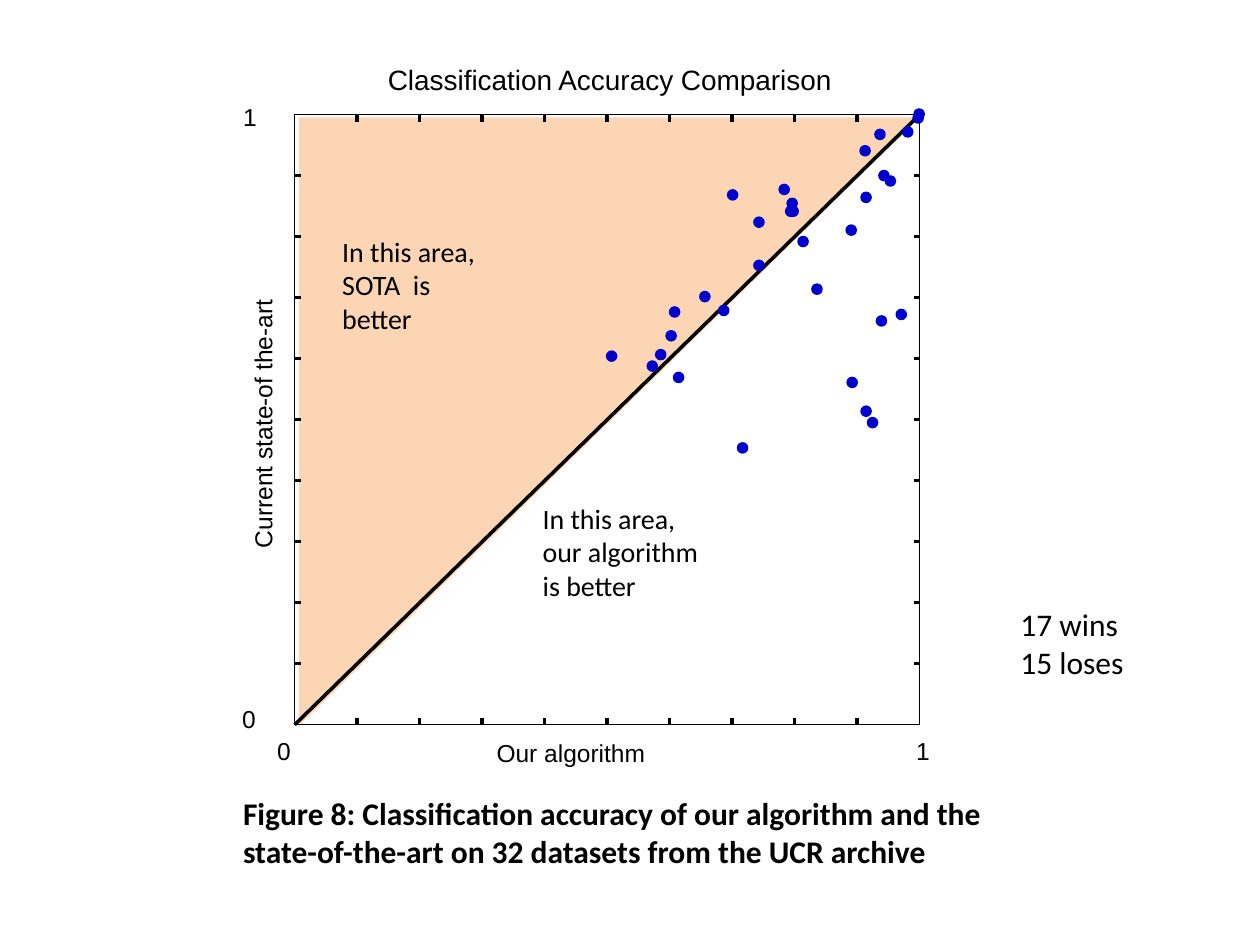
"""Build a slide with a scatter plot comparing the accuracy of two classifiers."""
from lxml import etree
from pptx import Presentation
from pptx.dml.color import RGBColor
from pptx.enum.shapes import MSO_CONNECTOR, MSO_SHAPE
from pptx.oxml.ns import qn
from pptx.util import Cm, Pt

STRAIGHT = MSO_CONNECTOR.STRAIGHT
RECTANGLE = MSO_SHAPE.RECTANGLE
TRIANGLE = MSO_SHAPE.RIGHT_TRIANGLE
OVAL = MSO_SHAPE.OVAL

COLORS = {"text": "000000", "axis": "000000", "area": "FCD5B5", "dot": "0000CC"}

PLOT_LEFT, PLOT_TOP, PLOT_WIDTH, PLOT_HEIGHT = 5.94, 2.31, 12.6, 12.3
PLOT_RIGHT = PLOT_LEFT + PLOT_WIDTH
PLOT_BOTTOM = PLOT_TOP + PLOT_HEIGHT
INTERVALS = 10
TICK_HEIGHT, TICK_WIDTH = 0.14, 0.12
DOT_SIZE = 0.18

DOTS = [
    (14.68, 3.84), (12.24, 7.09), (15.72, 3.73), (15.21, 4.39),
    (13.51, 6.2), (15.88, 4.01), (15.85, 4.17), (15.9, 4.17),
    (14.12, 5.89), (13.44, 6.68), (17.65, 2.62), (17.35, 2.95),
    (13.23, 7.06), (13.06, 7.29), (15.21, 5.26), (18.44, 2.21),
    (18.42, 2.29), (18.21, 2.57), (14.5, 6.17), (16.1, 4.78),
    (17.73, 3.45), (13.59, 7.52), (17.37, 3.89), (17.86, 3.56),
    (17.07, 4.55), (16.38, 5.74), (14.88, 8.94), (17.68, 6.38),
    (18.08, 6.25), (17.09, 7.62), (17.37, 8.2), (17.5, 8.43),
]

AXIS_TEXTS = [
    ("Current state-of the-art", 2.79, 8.23, 5.03, 14, 270),
    ("Our algorithm", 10.01, 14.88, 3.02, 14, 0),
    ("Classification Accuracy Comparison", 7.82, 1.27, 9.04, 16, 0),
    ("0", 5.59, 14.83, 0.28, 14, 0),
    ("1", 18.47, 14.83, 0.28, 14, 0),
    ("0", 4.88, 14.2, 0.76, 14, 0),
    ("1", 4.9, 2.06, 0.76, 14, 0),
]

NOTES = [
    (["In this area,", "our algorithm", "is better"], 10.69, 9.98, 6.27, 2.31, 16, False),
    (["In this area,", "SOTA  is", "better"], 6.65, 4.6, 5.69, 2.31, 16, False),
    (["17 wins", "15 loses"], 20.32, 12.07, 2.62, 1.8, 18, False),
    (["Figure 8: Classification accuracy of our algorithm and the "
      "state-of-the-art on 32 datasets from the UCR archive"],
     4.65, 15.88, 16.94, 1.8, 18, True),
]


def add_text(lines, left, top, width, height, font_name, size, bold=False):
    shape = slide.shapes.add_textbox(Cm(left), Cm(top), Cm(width), Cm(height))
    frame = shape.text_frame
    frame.word_wrap = True
    frame.text = "\n".join(lines)
    for paragraph in frame.paragraphs:
        paragraph.font.name = font_name
        paragraph.font.size = Pt(size)
        paragraph.font.bold = bold
        paragraph.font.color.rgb = RGBColor.from_string(COLORS["text"])
    return shape


def add_line(x1, y1, x2, y2):
    line = slide.shapes.add_connector(STRAIGHT, Cm(x1), Cm(y1), Cm(x2), Cm(y2))
    line.line.color.rgb = RGBColor.from_string(COLORS["axis"])
    line.line.width = Pt(0)
    etree.SubElement(line._element.spPr, qn("a:effectLst"))


presentation = Presentation()
presentation.slide_width = Cm(25.4)
presentation.slide_height = Cm(19.05)
slide = presentation.slides.add_slide(presentation.slide_layouts[6])

area = slide.shapes.add_shape(TRIANGLE, Cm(6.15), Cm(2.24), Cm(12.27), Cm(12.52))
area.rotation = 90
area.shadow.inherit = False
area.fill.solid()
area.fill.fore_color.rgb = RGBColor.from_string(COLORS["area"])
area.line.fill.background()

border = slide.shapes.add_shape(
    RECTANGLE, Cm(PLOT_LEFT), Cm(PLOT_TOP), Cm(PLOT_WIDTH), Cm(PLOT_HEIGHT))
border.shadow.inherit = False
border.fill.background()
border.line.color.rgb = RGBColor.from_string(COLORS["axis"])
border.line.width = Pt(0)

for index in range(1, INTERVALS):
    x = PLOT_LEFT + index * PLOT_WIDTH / INTERVALS
    y = PLOT_TOP + index * PLOT_HEIGHT / INTERVALS
    add_line(x, PLOT_BOTTOM, x, PLOT_BOTTOM - TICK_HEIGHT)
    add_line(x, PLOT_TOP, x, PLOT_TOP + TICK_HEIGHT)
    add_line(PLOT_LEFT, y, PLOT_LEFT + TICK_WIDTH, y)
    add_line(PLOT_RIGHT, y, PLOT_RIGHT - TICK_WIDTH, y)
add_line(PLOT_LEFT, PLOT_BOTTOM, PLOT_RIGHT, PLOT_TOP)

for left, top in DOTS:
    dot = slide.shapes.add_shape(OVAL, Cm(left), Cm(top), Cm(DOT_SIZE), Cm(DOT_SIZE))
    dot.shadow.inherit = False
    dot.fill.solid()
    dot.fill.fore_color.rgb = RGBColor.from_string(COLORS["dot"])
    dot.line.color.rgb = RGBColor.from_string(COLORS["dot"])
    dot.line.width = Pt(1.5)

for text, left, top, width, size, rotation in AXIS_TEXTS:
    label = add_text([text], left, top, width, 0.61, "Arial", size)
    label.rotation = rotation
    frame = label.text_frame
    frame.word_wrap = len(text) == 1
    frame.margin_left = frame.margin_right = 0
    frame.margin_top = frame.margin_bottom = 0

for lines, left, top, width, height, size, bold in NOTES:
    add_text(lines, left, top, width, height, "Calibri", size, bold)

presentation.save("out.pptx")
